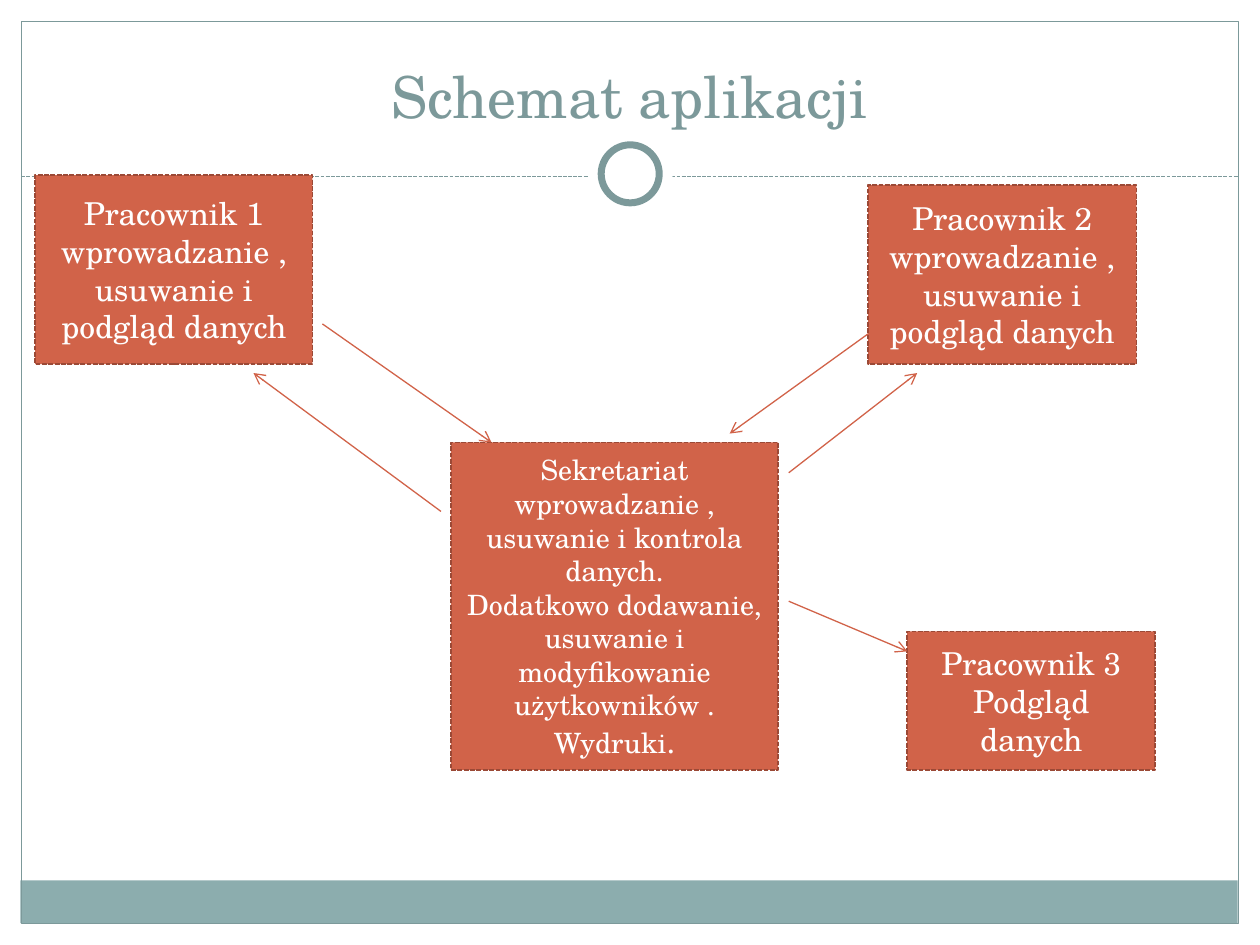
from dataclasses import dataclass

from lxml.etree import SubElement
from pptx import Presentation
from pptx.dml.color import RGBColor
from pptx.enum.dml import MSO_LINE_DASH_STYLE as Dash
from pptx.enum.shapes import MSO_CONNECTOR_TYPE as Link, MSO_SHAPE as Preset
from pptx.enum.text import MSO_ANCHOR as Anchor, MSO_AUTO_SIZE as AutoSize, PP_ALIGN as Align
from pptx.oxml.ns import qn
from pptx.util import Cm, Pt


@dataclass(frozen=True)
class Theme:
    font: str = "TeX Gyre Schola"
    white: str = "FFFFFF"
    slate: str = "7C999A"
    band: str = "8CADAE"
    brick: str = "D16349"
    brick_edge: str = "9B4936"
    title_size: float = 33
    box_size: float = 18
    dense_size: float = 16
    thin: float = 0.75
    edge: float = 0.9
    ring: float = 4


@dataclass(frozen=True)
class Area:
    left: float
    top: float
    width: float
    height: float

    def lengths(self) -> list:
        return [Cm(value) for value in (self.left, self.top, self.width, self.height)]


@dataclass(frozen=True)
class Role:
    area: Area
    lines: tuple
    size: float


@dataclass(frozen=True)
class Route:
    start: tuple
    end: tuple


THEME = Theme()
DUTIES = "wprowadzanie , usuwanie i podgląd danych"
SECRETARIAT = Role(
    Area(9.09, 8.92, 6.6, 6.6),
    (
        "Sekretariat",
        "wprowadzanie , usuwanie i kontrola danych.",
        "Dodatkowo dodawanie, usuwanie i modyfikowanie użytkowników . Wydruki",
    ),
    THEME.dense_size,
)
WORKERS = (
    Role(Area(0.71, 3.53, 5.59, 3.81), ("Pracownik 1", DUTIES), THEME.box_size),
    Role(Area(17.5, 3.73, 5.41, 3.61), ("Pracownik 2", DUTIES), THEME.box_size),
    Role(Area(18.29, 12.73, 5, 2.79), ("Pracownik 3", "Podgląd danych"), THEME.box_size),
)
ROUTES = (
    Route((6.5, 6.53), (9.91, 8.92)),
    Route((8.89, 10.31), (5.11, 7.52)),
    Route((17.5, 6.73), (14.71, 8.74)),
    Route((15.9, 9.53), (18.49, 7.52)),
    Route((15.9, 12.12), (18.29, 13.13)),
)


def color(code: str) -> RGBColor:
    return RGBColor.from_string(code)


def style_span(span, size: float, code: str) -> None:
    span.font.name = THEME.font
    span.font.size = Pt(size)
    span.font.color.rgb = color(code)


def style_line(line, code: str, width: float, dash=None) -> None:
    line.color.rgb = color(code)
    line.width = Pt(width)
    if dash is not None:
        line.dash_style = dash


def add_figure(page, preset, area: Area, fill: str = "", edge: str = "", width: float = 0, dash=None):
    figure = page.shapes.add_shape(preset, *area.lengths())
    figure.shadow.inherit = False
    if fill:
        figure.fill.solid()
        figure.fill.fore_color.rgb = color(fill)
    else:
        figure.fill.background()
    if edge:
        style_line(figure.line, edge, width, dash)
    else:
        figure.line.fill.background()
    return figure


def add_line(page, route: Route, code: str, dash=None, arrow: bool = False) -> None:
    ends = [Cm(value) for value in (*route.start, *route.end)]
    line = page.shapes.add_connector(Link.STRAIGHT, *ends)
    style_line(line.line, code, THEME.thin, dash)
    if arrow:
        SubElement(line.line._get_or_add_ln(), qn("a:tailEnd"), type="arrow")
    SubElement(line._element.spPr, qn("a:effectLst"))


def add_role(page, role: Role):
    box = add_figure(page, Preset.RECTANGLE, role.area, THEME.brick, THEME.brick_edge,
                     THEME.edge, Dash.SQUARE_DOT)
    frame = box.text_frame
    frame.word_wrap = True
    frame.vertical_anchor = Anchor.MIDDLE
    frame.text = "\n".join(role.lines)
    for para in frame.paragraphs:
        para.alignment = Align.CENTER
        for span in para.runs:
            style_span(span, role.size, THEME.white)
    return box


def add_title(page, text: str) -> None:
    title = page.shapes.title
    title.left, title.top, title.width, title.height = Area(0.84, 0.64, 23.7, 2.11).lengths()
    frame = title.text_frame
    frame.text = text
    frame.word_wrap = True
    frame.auto_size = AutoSize.NONE
    frame.vertical_anchor = Anchor.BOTTOM
    para = frame.paragraphs[0]
    para.alignment = Align.CENTER
    style_span(para.runs[0], THEME.title_size, THEME.slate)


def add_decor(page) -> None:
    add_figure(page, Preset.RECTANGLE, Area(0.41, 17.75, 24.54, 0.86), THEME.band)
    add_figure(page, Preset.RECTANGLE, Area(0.43, 0.43, 24.54, 18.19),
               edge=THEME.slate, width=THEME.thin)
    add_line(page, Route((0.43, 3.56), (24.97, 3.56)), THEME.slate, Dash.SQUARE_DOT)
    add_figure(page, Preset.OVAL, Area(11.86, 2.67, 1.7, 1.7), THEME.white)
    add_figure(page, Preset.OVAL, Area(12.12, 2.92, 1.17, 1.17), THEME.white,
               THEME.slate, THEME.ring)


def main() -> None:
    deck = Presentation()
    deck.slide_width, deck.slide_height = Cm(25.4), Cm(19.05)
    page = deck.slides.add_slide(deck.slide_layouts.get_by_name("Title Only"))
    add_decor(page)
    add_title(page, "Schemat aplikacji")

    secretariat = add_role(page, SECRETARIAT)
    full_stop = secretariat.text_frame.paragraphs[-1].add_run()
    full_stop.text = "."
    style_span(full_stop, THEME.box_size, THEME.white)
    for worker in WORKERS:
        add_role(page, worker)
    for route in ROUTES:
        add_line(page, route, THEME.brick, arrow=True)
    deck.save("out.pptx")


if __name__ == "__main__":
    main()
